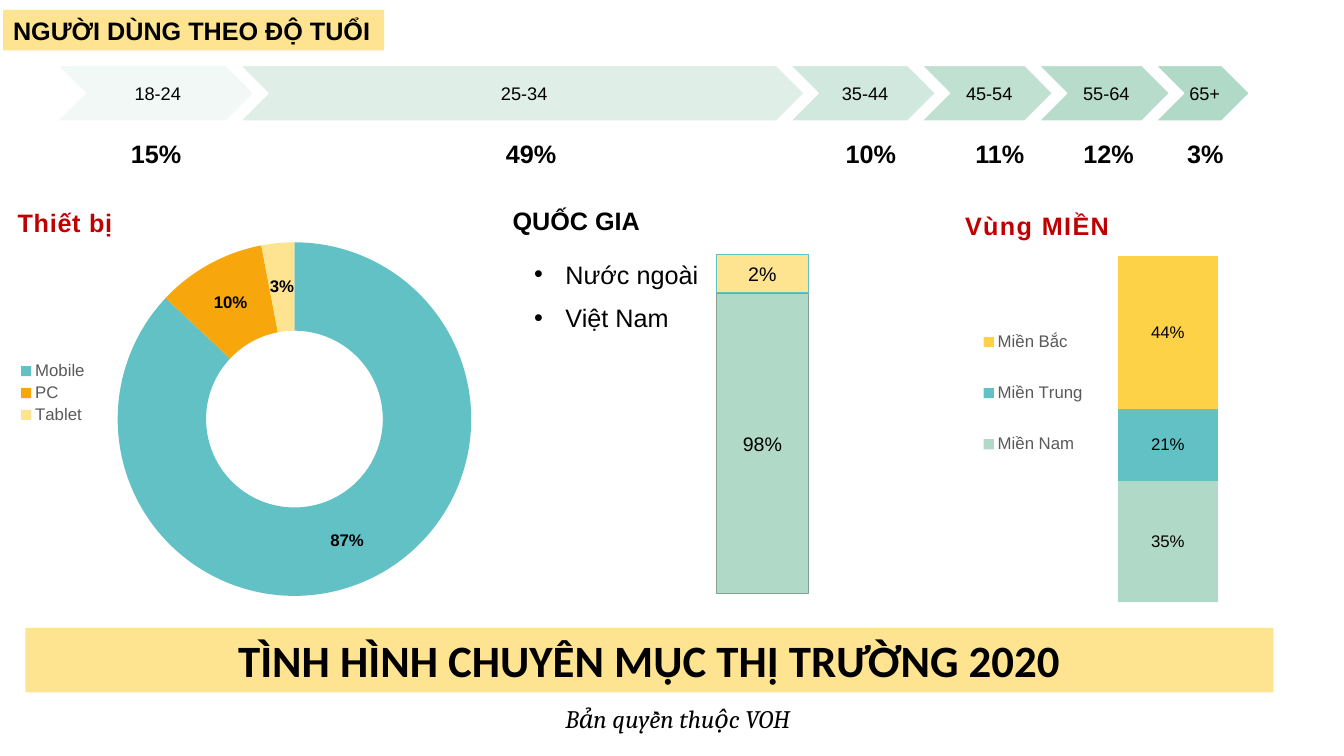
from lxml.etree import SubElement
from pptx import Presentation
from pptx.chart.data import CategoryChartData
from pptx.dml.color import RGBColor
from pptx.enum.chart import XL_CHART_TYPE as ChartType, XL_LEGEND_POSITION as LegendPos
from pptx.enum.shapes import MSO_SHAPE as Shape
from pptx.enum.text import MSO_ANCHOR as Anchor, PP_ALIGN as Align
from pptx.oxml.ns import qn
from pptx.util import Cm, Pt

MINT, TEAL, CREAM = "B1D9C7", "62C1C5", "FEE491"
ORANGE, YELLOW, RED, GREY = "F7A60B", "FDD247", "C00000", "595959"

# age group, share, chevron width, opacity in percent, left of the share label
AGE_GROUPS = [
    ("18-24", "15%", 4.95, 17, 3.05),
    ("25-34", "49%", 14.22, 40, 12.5),
    ("35-44", "10%", 3.66, 60, 21.06),
    ("45-54", "11%", 3.3, 80, 24.33),
    ("55-64", "12%", 3.3, 90, 27.05),
    ("65+", "3%", 2.36, 100, 29.67),
]
REGIONS = [("Miền Nam", 0.35, MINT), ("Miền Trung", 0.21, TEAL), ("Miền Bắc", 0.44, YELLOW)]
DEVICES = [("Mobile", 87, TEAL), ("PC", 10, ORANGE), ("Tablet", 3, CREAM)]


def paint(colour_format, colour):
    colour_format.rgb = RGBColor.from_string(colour)


def fill(target, colour):
    target.fill.solid()
    paint(target.fill.fore_color, colour)


def style(font, size, colour="000000", bold=False, italic=False, face="Arial"):
    font.size, font.bold, font.italic, font.name = Pt(size), bold, italic, face
    paint(font.color, colour)


def write(frame, text, align=Align.LEFT, anchor=Anchor.TOP, wrap=False, bullet=False,
          size=18, **font):
    frame.word_wrap = wrap
    frame.vertical_anchor = anchor
    paragraph = frame.paragraphs[0]
    paragraph.alignment = align
    if bullet:
        props = paragraph._p.get_or_add_pPr()
        props.set("marL", str(Cm(0.79)))
        props.set("indent", str(-Cm(0.79)))
        SubElement(props, qn("a:buFont")).set("typeface", "Arial")
        SubElement(props, qn("a:buChar")).set("char", "•")
    run = paragraph.add_run()
    run.text = text
    style(run.font, size, **font)
    return run


def add_label(slide, text, left, top, width, height=1.02, **fmt):
    box = slide.shapes.add_textbox(Cm(left), Cm(top), Cm(width), Cm(height))
    write(box.text_frame, text, **fmt)


def add_block(slide, text, left, top, width, height, colour, kind=Shape.RECTANGLE,
              line=None, line_width=1, **fmt):
    block = slide.shapes.add_shape(kind, Cm(left), Cm(top), Cm(width), Cm(height))
    block.shadow.inherit = False
    fill(block, colour)
    if line:
        paint(block.line.color, line)
        block.line.width = Pt(line_width)
    else:
        block.line.fill.background()
    write(block.text_frame, text, **fmt)
    return block


def add_age_chevron(slide, age, left, width, opacity):
    chevron = add_block(slide, age, left, 1.65, width, 1.4, MINT, Shape.CHEVRON, "FFFFFF",
                        size=13, align=Align.CENTER, anchor=Anchor.MIDDLE)
    frame = chevron.text_frame
    frame.margin_left = Cm(0.15)
    frame.margin_right = frame.margin_top = frame.margin_bottom = Cm(0.05)
    if opacity < 100:
        tint = chevron.fill._xPr.find(".//" + qn("a:srgbClr"))
        SubElement(tint, qn("a:alpha")).set("val", str(opacity * 1000))


def place(chart, part, **fractions):
    """Fix a chart part at fractions of the chart's size."""
    owner = chart._chartSpace.find(".//" + qn("c:" + part))
    for old in owner.findall(qn("c:layout")):
        owner.remove(old)
    layout = SubElement(owner, qn("c:layout"))
    before = {"title": "c:tx", "legend": "c:legendPos"}.get(part)
    owner.insert(owner.index(owner.find(qn(before))) + 1 if before else 0, layout)
    manual = SubElement(layout, qn("c:manualLayout"))
    if part == "plotArea":
        SubElement(manual, qn("c:layoutTarget")).set("val", "inner")
    for mode in ("xMode", "yMode"):
        SubElement(manual, qn("c:" + mode)).set("val", "edge")
    for key, value in fractions.items():
        SubElement(manual, qn("c:" + key)).set("val", str(value))


def add_share_chart(slide, kind, data, title, spacing, left, top, width, height):
    chart = slide.shapes.add_chart(kind, Cm(left), Cm(top), Cm(width), Cm(height), data).chart
    style(chart.font, 10, face="Calibri")
    chart.has_title = True
    heading = write(chart.chart_title.text_frame, title, colour=RED, bold=True)
    heading.font._element.set("spc", str(spacing))
    chart.chart_title.include_in_layout = False
    chart.has_legend = True
    chart.legend.position = LegendPos.LEFT
    chart.legend.include_in_layout = False
    style(chart.legend.font, 12, GREY)
    return chart


def format_labels(labels, bold=False):
    labels.number_format, labels.number_format_is_linked = "0%", False
    style(labels.font, 12, bold=bold)


def add_device_chart(slide):
    data = CategoryChartData()
    data.categories = [name for name, _, _ in DEVICES]
    data.add_series("Series 1", [share for _, share, _ in DEVICES])
    chart = add_share_chart(slide, ChartType.DOUGHNUT, data, "Thiết bị", 50,
                            0.08, 4.42, 12.55, 10.97)
    ring = chart.plots[0]
    ring.vary_by_categories = True
    ring._element.find(qn("c:holeSize")).set("val", "50")
    for index, (_, _, colour) in enumerate(DEVICES):
        fill(ring.series[0].points[index].format, colour)
    labels = ring.series[0].data_labels
    labels.show_percentage, labels.show_value = True, False
    format_labels(labels, bold=True)
    place(chart, "title", x=0.02, y=0.06)
    place(chart, "plotArea", x=0.23, y=0.15, w=0.71, h=0.82)
    place(chart, "legend", x=0.02, y=0.42, w=0.16, h=0.16)


def add_region_chart(slide):
    data = CategoryChartData(number_format="0%")
    data.categories = ["1"]
    for name, share, _ in REGIONS:
        data.add_series(name, [share])
    chart = add_share_chart(slide, ChartType.COLUMN_STACKED_100, data, "Vùng MIỀN", 100,
                            24.05, 4.95, 7.8, 10.44)
    chart.category_axis.visible = chart.value_axis.visible = False
    chart.value_axis.has_major_gridlines = False
    column = chart.plots[0]
    column.vary_by_categories = False
    column.gap_width, column.overlap = 79, 100
    for series, (_, _, colour) in zip(column.series, REGIONS):
        fill(series.format, colour)
        series.data_labels.show_value = True
        format_labels(series.data_labels)
    place(chart, "title", x=0.02, y=0.02)
    place(chart, "plotArea", x=0.4, y=0.145, w=0.58, h=0.835)
    place(chart, "legend", x=0.08, y=0.25, w=0.35, h=0.45)


def main():
    deck = Presentation()
    deck.slide_width, deck.slide_height = Cm(33.87), Cm(19.05)
    slide = deck.slides.add_slide(deck.slide_layouts[6])

    # Users by age
    left, overlap = 1.45, 0.35
    for age, share, width, opacity, share_left in AGE_GROUPS:
        add_age_chevron(slide, age, left, width, opacity)
        add_label(slide, share, share_left, 3.37, 1.45 if len(share) < 3 else 1.8, bold=True)
        left += width - overlap
    add_block(slide, "NGƯỜI DÙNG THEO ĐỘ TUỔI", 0.08, 0.25, 9.6, 1.02, CREAM, bold=True)

    # Devices and regions
    add_device_chart(slide)
    add_region_chart(slide)

    # Countries
    centred = dict(size=14, align=Align.CENTER, anchor=Anchor.MIDDLE)
    add_block(slide, "98%", 18.06, 7.39, 2.31, 7.57, MINT, line="83A193", **centred)
    add_block(slide, "2%", 18.06, 6.4, 2.31, 0.97, CREAM, line=TEAL, line_width=0.5, **centred)
    add_label(slide, "QUỐC GIA", 12.67, 5.05, 3.71, bold=True)
    add_label(slide, "Nước ngoài", 13.21, 6.4, 4.7, bullet=True)
    add_label(slide, "Việt Nam", 13.21, 7.49, 4.04, bullet=True)

    # Banner and copyright line
    add_block(slide, "TÌNH HÌNH CHUYÊN MỤC THỊ TRƯỜNG 2020", 0.64, 15.82, 31.45, 1.63, CREAM,
              size=32, bold=True, face="Calibri", align=Align.CENTER, wrap=True)
    add_label(slide, "Bản quyền thuộc VOH", 14, 17.6, 6.27, italic=True, face="Cambria")

    deck.save("out.pptx")


if __name__ == "__main__":
    main()
